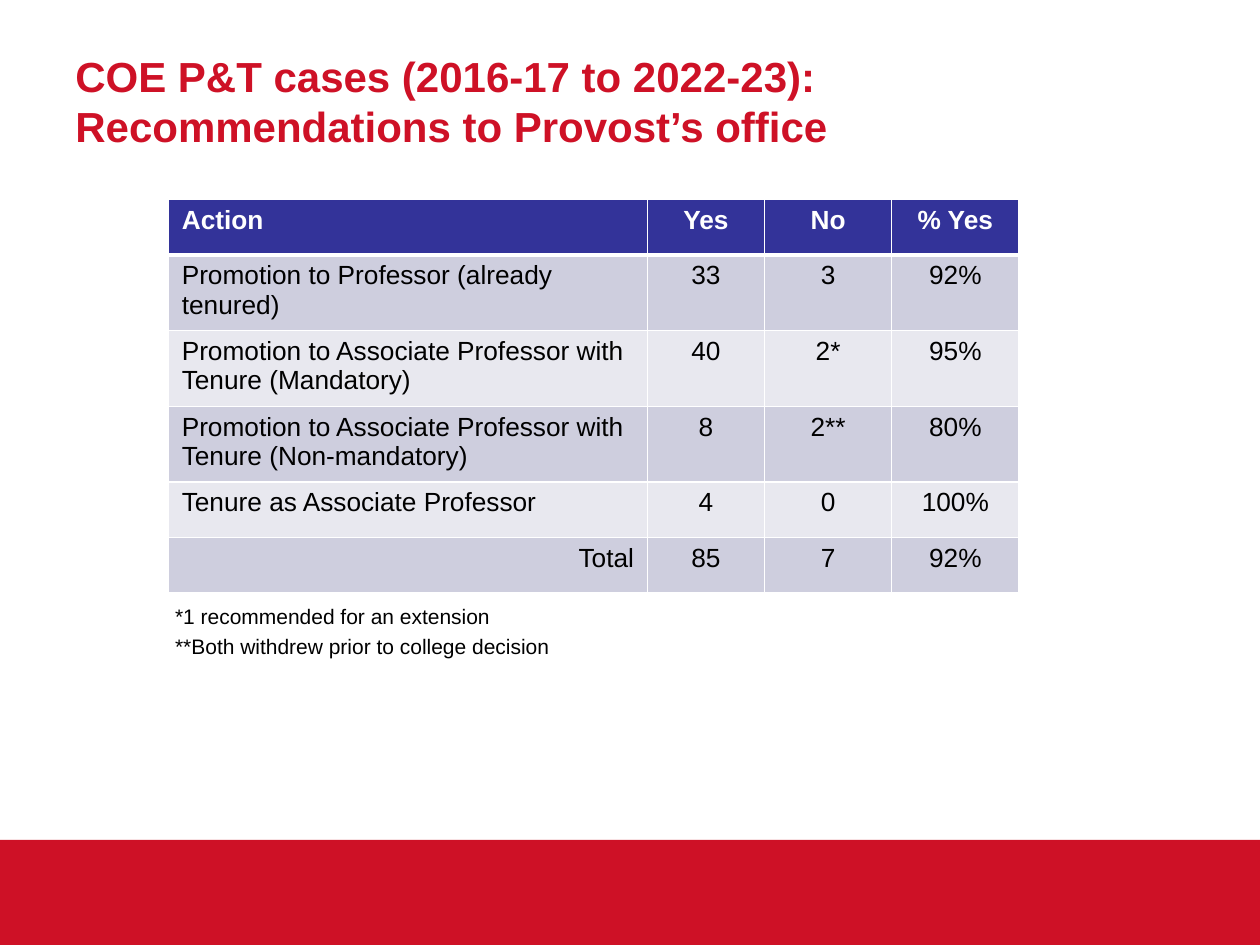
import pptx
import pptx.dml.color
import pptx.enum.shapes
import pptx.enum.text
import pptx.oxml.ns
import pptx.util
from lxml import etree

Pt = pptx.util.Pt
RGBColor = pptx.dml.color.RGBColor
Align = pptx.enum.text.PP_ALIGN
Anchor = pptx.enum.text.MSO_ANCHOR

RED = RGBColor(0xCE, 0x11, 0x26)
NAVY = RGBColor(0x33, 0x33, 0x99)
LAVENDER = RGBColor(0xCE, 0xCE, 0xDE)
PALE = RGBColor(0xE8, 0xE8, 0xEF)
WHITE = RGBColor(0xFF, 0xFF, 0xFF)
BLACK = RGBColor(0, 0, 0)

COLUMN_WIDTHS = [273.6, 67, 72.7, 72.7]
ROW_HEIGHTS = [31.7, 31.7, 43.2, 43.2, 31.7, 31.7]
CASES = [
    ["Action", "Yes", "No", "% Yes"],
    ["Promotion to Professor (already tenured)", "33", "3", "92%"],
    ["Promotion to Associate Professor with Tenure (Mandatory)", "40", "2*", "95%"],
    ["Promotion to Associate Professor with Tenure (Non-mandatory)", "8", "2**", "80%"],
    ["Tenure as Associate Professor", "4", "0", "100%"],
    ["Total", "85", "7", "92%"],
]


def format_paragraph(paragraph, size, color, bold=False, alignment=Align.LEFT):
    paragraph.alignment = alignment
    for run in paragraph.runs:
        run.font.name = "Arial"
        run.font.size = Pt(size)
        run.font.bold = bold
        run.font.color.rgb = color


def add_text(slide, box, lines, size, color, bold=False, anchor=Anchor.TOP, gap=0):
    shape = slide.shapes.add_textbox(*map(Pt, box))
    text_frame = shape.text_frame
    text_frame.word_wrap = True
    text_frame.vertical_anchor = anchor
    text_frame.text = "\n".join(lines)
    for index, paragraph in enumerate(text_frame.paragraphs):
        format_paragraph(paragraph, size, color, bold)
        if index:
            paragraph.space_before = Pt(gap)


def add_band(slide, box, color):
    shape = slide.shapes.add_shape(
        pptx.enum.shapes.MSO_SHAPE.RECTANGLE, *map(Pt, box))
    shape.shadow.inherit = False
    shape.fill.solid()
    shape.fill.fore_color.rgb = color
    shape.line.fill.background()


def set_borders(cell, color, widths):
    """Draw cell borders; widths run left, right, top, bottom."""
    qn = pptx.oxml.ns.qn
    properties = cell._tc.get_or_add_tcPr()
    for side, width in zip("LRTB", widths):
        line = etree.SubElement(properties, qn(f"a:ln{side}"), w=str(Pt(width)))
        fill = etree.SubElement(line, qn("a:solidFill"))
        etree.SubElement(fill, qn("a:srgbClr"), val=str(color))


def format_cell(cell, row, column):
    header = row == 0
    # The rule under the header is thicker than the others
    set_borders(cell, WHITE, [1, 1, 3 if row == 1 else 1, 3 if header else 1])
    cell.fill.solid()
    cell.fill.fore_color.rgb = NAVY if header else LAVENDER if row % 2 else PALE
    cell.margin_left = cell.margin_right = Pt(7.6)
    cell.margin_top = cell.margin_bottom = Pt(3.6)
    if column:
        alignment = Align.CENTER
    else:
        alignment = Align.RIGHT if row == len(CASES) - 1 else Align.LEFT
    format_paragraph(cell.text_frame.paragraphs[0], 15,
                     WHITE if header else BLACK, header, alignment)


def add_cases_table(slide, left, top):
    table = slide.shapes.add_table(
        len(ROW_HEIGHTS), len(COLUMN_WIDTHS), Pt(left), Pt(top),
        Pt(sum(COLUMN_WIDTHS)), Pt(sum(ROW_HEIGHTS))).table
    for table_column, width in zip(table.columns, COLUMN_WIDTHS):
        table_column.width = Pt(width)
    for table_row, height in zip(table.rows, ROW_HEIGHTS):
        table_row.height = Pt(height)
    for row, values in enumerate(CASES):
        for column, value in enumerate(values):
            cell = table.cell(row, column)
            cell.text_frame.text = value
            format_cell(cell, row, column)


def main():
    presentation = pptx.Presentation()
    presentation.slide_width = Pt(720)
    presentation.slide_height = Pt(540)
    slide = presentation.slides.add_slide(presentation.slide_layouts[6])

    # Footer band
    add_band(slide, (0, 480, 720, 60), RED)

    # Title
    add_text(slide, (36, 12.5, 648, 90),
             ["COE P&T cases (2016-17 to 2022-23): "
              "Recommendations to Provost’s office"],
             24, RED, bold=True, anchor=Anchor.MIDDLE)

    # Recommendations by action
    add_cases_table(slide, 96.3, 114)

    # Footnotes
    add_text(slide, (93, 341.5, 246, 42.5),
             ["*1 recommended for an extension",
              "**Both withdrew prior to college decision"],
             12, BLACK, gap=2.4)

    presentation.save("out.pptx")


if __name__ == "__main__":
    main()
